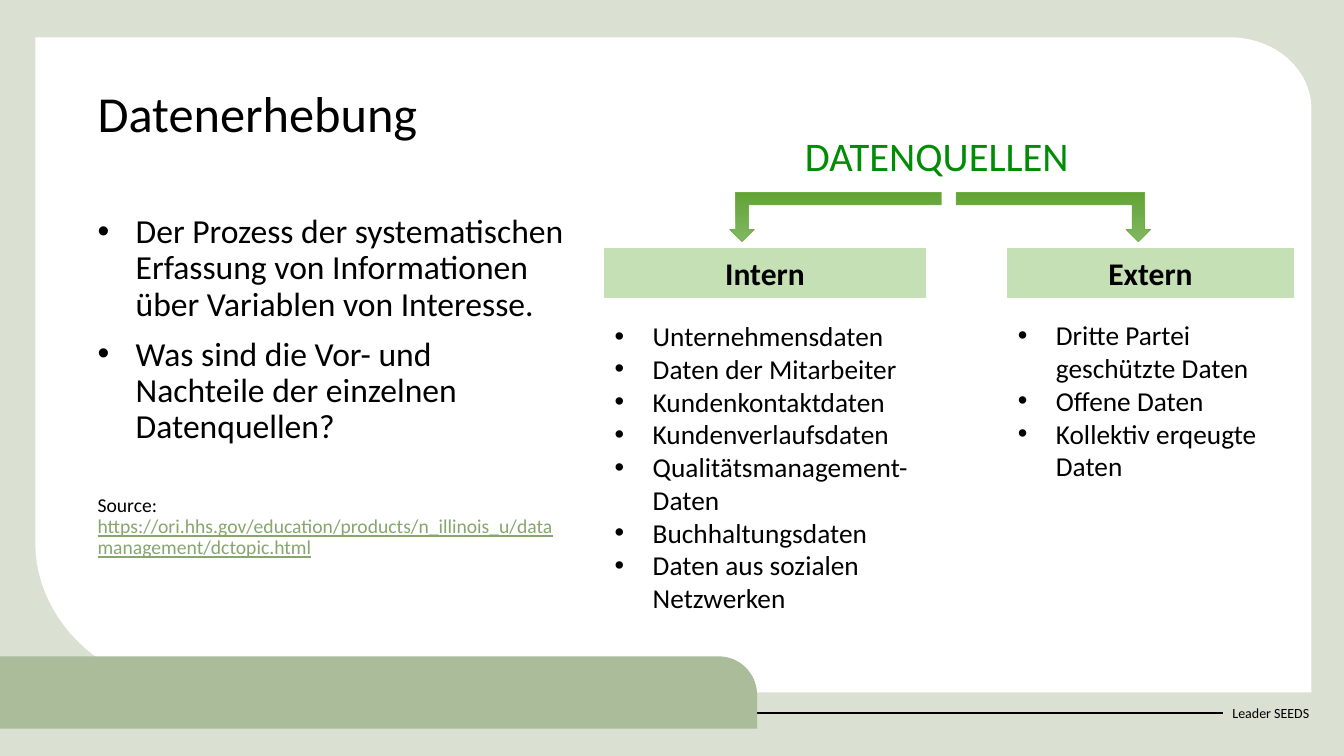
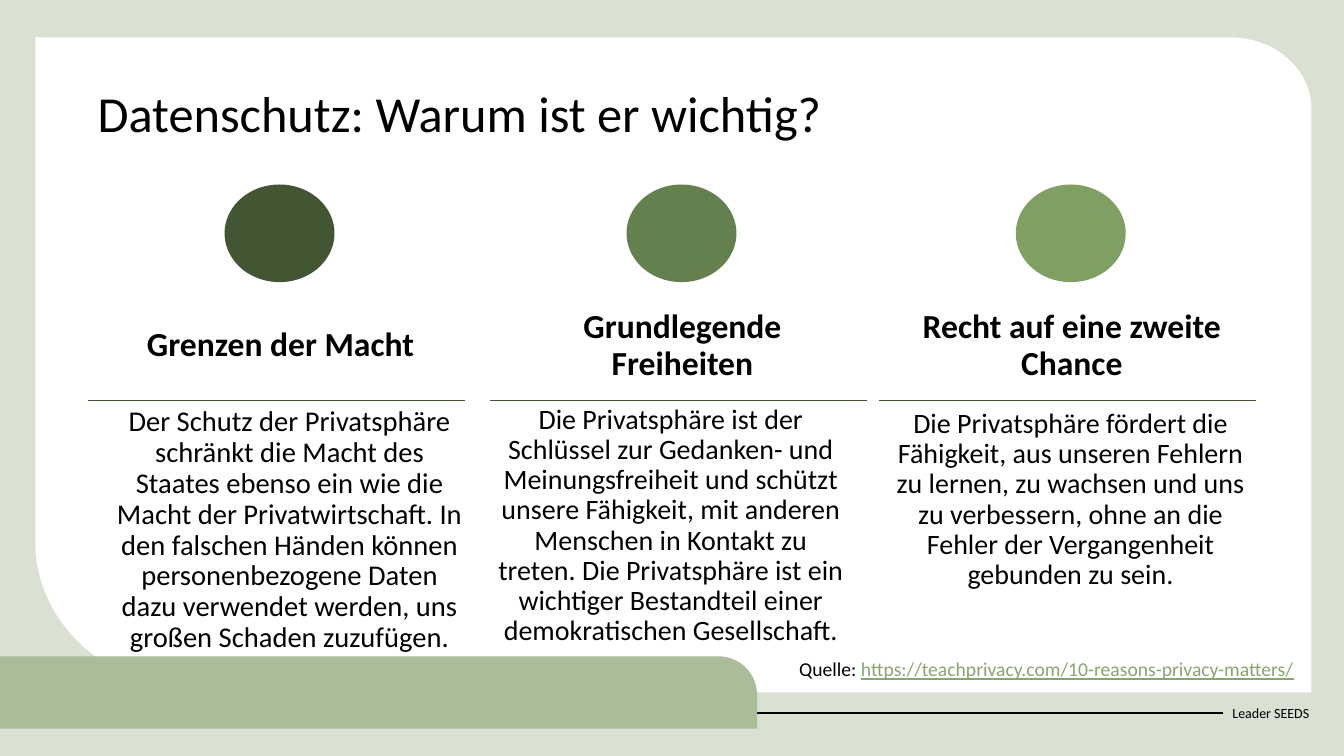
"""Two slides on data collection and data privacy."""
from math import cos, pi, sin

from lxml import etree
from pptx import Presentation
from pptx.dml.color import RGBColor
from pptx.enum import shapes, text
from pptx.oxml.ns import qn
from pptx.util import Cm, Pt

FONT, BLACK, WHITE = "Calibri", "000000", "FFFFFF"
PALE, SAGE, LINK, DARK = "DAE0D2", "AABC99", "87A66E", "435634"
HEAD, LEAF, EDGE = "018C06", "C5E0B4", "70AD47"
SHADE = ("81B861", "62A336")
KIND, ALIGN, ANCHOR = shapes.MSO_SHAPE, text.PP_ALIGN, text.MSO_ANCHOR
WIDE, HIGH = 33.87, 19.05

POINTS = [
    "Der Prozess der systematischen Erfassung von Informationen über Variablen von Interesse.",
    "Was sind die Vor- und Nachteile der einzelnen Datenquellen?",
]
SOURCE = ("Source: ", "https://ori.hhs.gov/education/products/n_illinois_u/datamanagement/dctopic.html")
QUELLE = ("Quelle: ", "https://teachprivacy.com/10-reasons-privacy-matters/")
GROUPS = [
    ("Intern", 15.24, 8.08, 7.92, 7.75, [
        "Unternehmensdaten", "Daten der Mitarbeiter", "Kundenkontaktdaten",
        "Kundenverlaufsdaten", "Qualitätsmanagement-Daten",
        "Buchhaltungsdaten", "Daten aus sozialen Netzwerken"]),
    ("Extern", 25.4, 7.19, 7.9, 4.42, [
        "Dritte Partei geschützte Daten", "Offene Daten",
        "Kollektiv erqeugte Daten"]),
]
ARROWS = [(18.39, 5.33, False), (24.1, 4.9, True)]
REASONS = [
    ("Grenzen der Macht", DARK, 2.21, (2.57, 10.13, 9.45, 6.68), 20.4,
     "Der Schutz der Privatsphäre schränkt die Macht des Staates ebenso ein wie "
     "die Macht der Privatwirtschaft. In den falschen Händen können "
     "personenbezogene Daten dazu verwendet werden, uns großen Schaden zuzufügen."),
    ("Grundlegende Freiheiten", "65804F", 12.34, (12.17, 10.08, 9.47, 5), 20,
     "Die Privatsphäre ist der Schlüssel zur Gedanken- und Meinungsfreiheit und "
     "schützt unsere Fähigkeit, mit anderen Menschen in Kontakt zu treten. Die "
     "Privatsphäre ist ein wichtiger Bestandteil einer demokratischen Gesellschaft."),
    ("Recht auf eine zweite Chance", "80A063", 22.15, (22.33, 10.19, 9.3, 5.59), 20,
     "Die Privatsphäre fördert die Fähigkeit, aus unseren Fehlern zu lernen, zu "
     "wachsen und uns zu verbessern, ohne an die Fehler der Vergangenheit "
     "gebunden zu sein."),
]


def rgb(code):
    return RGBColor.from_string(code)


def paint(shape, fill, edge=None, width=0.75):
    shape.shadow.inherit = False
    shape.fill.solid()
    shape.fill.fore_color.rgb = rgb(fill)
    if edge:
        shape.line.color.rgb = rgb(edge)
        shape.line.width = Pt(width)
    else:
        shape.line.fill.background()
    return shape


def block(slide, kind, box, fill, edge=None):
    return paint(slide.shapes.add_shape(kind, *map(Cm, box)), fill, edge)


def rule(slide, x, y, end, color, width):
    line = slide.shapes.add_connector(
        shapes.MSO_CONNECTOR.STRAIGHT, Cm(x), Cm(y), Cm(end), Cm(y))
    line.line.color.rgb = rgb(color)
    line.line.width = Pt(width)
    etree.SubElement(line._element.spPr, qn("a:effectLst"))


def arc(x, y, wide, high, start):
    turns = [start + pi / 2 * i / 24 for i in range(25)]
    return [(x + wide * cos(t), y + high * sin(t)) for t in turns]


def outline(slide, dots, fill):
    dots = [(Cm(x), Cm(y)) for x, y in dots]
    form = slide.shapes.build_freeform(*dots[0], scale=1.0)
    form.add_line_segments(dots[1:], close=True)
    paint(form.convert_to_shape(), fill)


def write(frame, items, size, color=BLACK, bold=False, align=ALIGN.LEFT,
          anchor=ANCHOR.TOP, lead=1, gap=0, bullet=False):
    frame.word_wrap = True
    frame.vertical_anchor = anchor
    for i, item in enumerate(items):
        para = frame.paragraphs[0] if i == 0 else frame.add_paragraph()
        para.alignment = align
        para.line_spacing = lead
        if i and gap:
            para.space_before = Pt(gap)
        if bullet:
            props = para._p.get_or_add_pPr()
            props.set("marL", str(Cm(0.96)))
            props.set("indent", str(-Cm(0.96)))
            etree.SubElement(props, qn("a:buFont"), typeface="Arial")
            etree.SubElement(props, qn("a:buChar"), char="•")
        style(para, size, color, bold)
        para.add_run().text = item


def style(para, size, color=BLACK, bold=False):
    font = para.font
    font.name, font.size, font.bold = FONT, Pt(size), bold
    font.color.rgb = rgb(color)


def label(slide, box, items, size, **look):
    frame = slide.shapes.add_textbox(*map(Cm, box)).text_frame
    write(frame, items, size, **look)
    return frame


def cite(para, parts):
    style(para, 14)
    for part in parts:
        run = para.add_run()
        run.text = part
    run.font.color.rgb = rgb(LINK)
    run.font.underline = True


def base(deck, title):
    slide = deck.slides.add_slide(deck.slide_layouts[6])
    block(slide, KIND.RECTANGLE, (0, 0, WIDE, HIGH), PALE)
    panel = [(0.89, 0.94), *arc(30.99, 2.74, 2.06, 1.8, -pi / 2),
             (33.05, 17.45), *arc(5.21, 13.67, 4.32, 3.78, pi / 2)]
    outline(slide, panel, WHITE)
    label(slide, (30.81, 17.45, 2.57, 1.02), ["Leader SEEDS"], 10,
          anchor=ANCHOR.MIDDLE)
    rule(slide, 0, 17.96, 30.81, BLACK, 1.5)
    band = [(0, 18.36), (0, 16.54), *arc(18.11, 17.51, 0.97, 0.97, -pi / 2),
            (19.08, 18.36)]
    outline(slide, band, SAGE)
    label(slide, (2.21, 2.11, 29.44, 2.24), [title], 36, lead=0.9)
    return slide


def arrow(slide, x, wide, flip):
    shape = block(slide, KIND.BENT_UP_ARROW, (x, 4.85, wide, 1.24), SHADE[0], EDGE)
    shape.line.width = Pt(0.5)
    shape.rotation = 180
    if flip:
        shape._element.spPr.xfrm.set("flipH", "1")
    shape.fill.gradient()
    shape.fill.gradient_angle = 270
    for stop, color in zip(shape.fill.gradient_stops, SHADE):
        stop.color.rgb = rgb(color)


def collect(deck):
    slide = base(deck, "Datenerhebung")
    frame = label(slide, (2.21, 5.28, 12.24, 11.1), POINTS, 24, lead=0.9,
                  gap=10, bullet=True)
    para = frame.add_paragraph()
    para.line_spacing = 0.9
    para.space_before = Pt(35.4)
    cite(para, SOURCE)
    label(slide, (18.7, 3.18, 9.83, 1.5), ["DATENQUELLEN"], 29, color=HEAD,
          align=ALIGN.CENTER)
    for name, x, wide, top, high, items in GROUPS:
        head = block(slide, KIND.RECTANGLE, (x, 6.27, wide, 1.22), LEAF, LEAF)
        write(head.text_frame, [name], 22.5, bold=True, align=ALIGN.CENTER)
        body = block(slide, KIND.RECTANGLE, (x, top, wide, high), WHITE)
        write(body.text_frame, items, 19.5, bullet=True)
    for spot in ARROWS:
        arrow(slide, *spot)


def protect(deck):
    slide = base(deck, "Datenschutz: Warum ist er wichtig?")
    for name, color, x, box, size, body in REASONS:
        block(slide, KIND.OVAL, (x + 3.45, 4.65, 2.77, 2.46), color)
        label(slide, (x + 0.35, 7.49, 9.02, 2.46), [name], 24, bold=True,
              align=ALIGN.CENTER, anchor=ANCHOR.MIDDLE, lead=0.9)
        rule(slide, x, 10.08, x + 9.5, DARK, 0.5)
        label(slide, box, [body], size, align=ALIGN.CENTER, lead=0.9)
    frame = label(slide, (19.89, 16.43, 13.9, 0.86), [], 14)
    cite(frame.paragraphs[0], QUELLE)


def main():
    deck = Presentation()
    deck.slide_width, deck.slide_height = Cm(WIDE), Cm(HIGH)
    collect(deck)
    protect(deck)
    deck.save("out.pptx")


if __name__ == "__main__":
    main()
